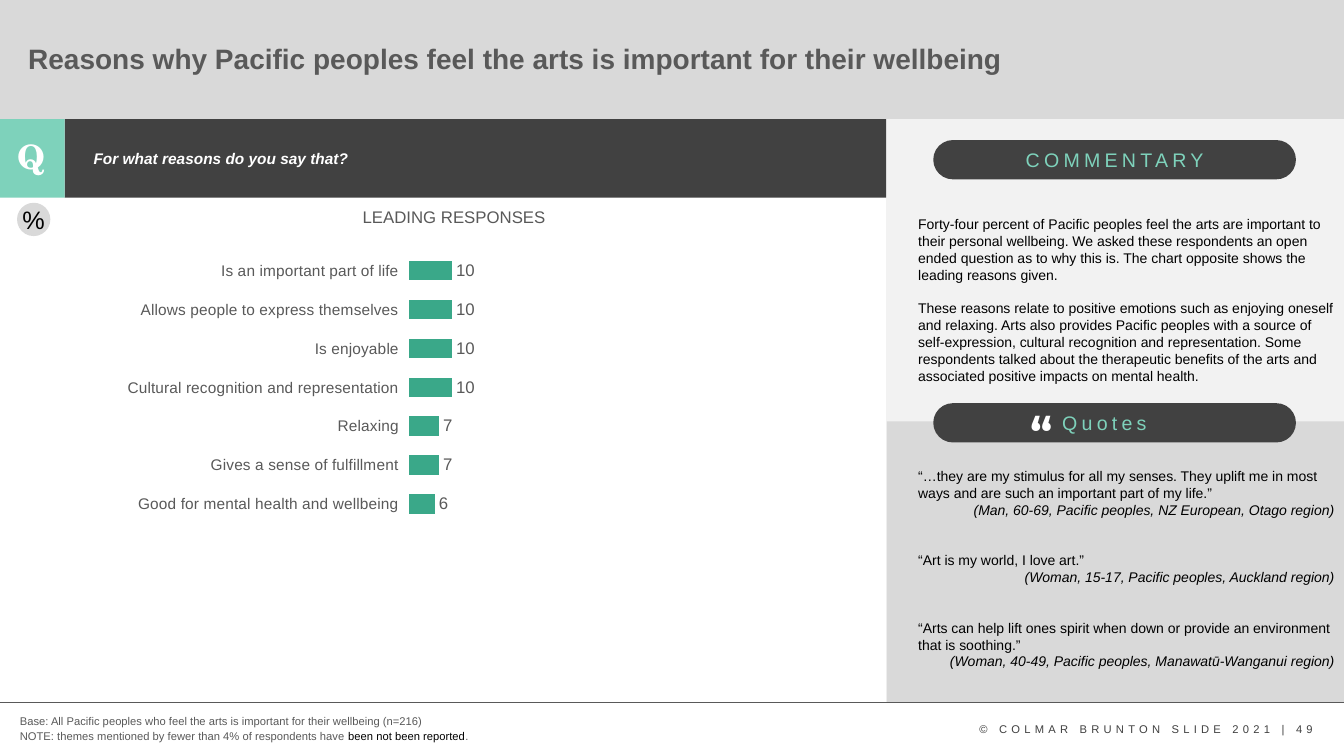
from lxml import etree
from pptx import Presentation
from pptx.chart.data import CategoryChartData
from pptx.dml.color import RGBColor
from pptx.enum.chart import XL_CHART_TYPE, XL_LABEL_POSITION as LABEL, XL_TICK_MARK as TICK
from pptx.enum.shapes import MSO_CONNECTOR, MSO_SHAPE as SHAPE
from pptx.enum.text import MSO_ANCHOR as ANCHOR, PP_ALIGN as ALIGN
from pptx.oxml import parse_xml
from pptx.oxml.ns import nsdecls, qn
from pptx.util import Cm, Pt

LIGHT = RGBColor(0xF2, 0xF2, 0xF2)
SILVER = RGBColor(0xD9, 0xD9, 0xD9)
GREY = RGBColor(0x59, 0x59, 0x59)
DARK = RGBColor(0x41, 0x41, 0x41)
FOOTER = RGBColor(0x40, 0x40, 0x40)
MINT = RGBColor(0x7E, 0xD2, 0xBB)
GREEN = RGBColor(0x3A, 0xA8, 0x89)
WHITE = RGBColor(0xFF, 0xFF, 0xFF)
BLACK = RGBColor(0, 0, 0)

prs = Presentation()
prs.slide_width, prs.slide_height = Cm(33.87), Cm(19.05)
s = prs.slides.add_slide(prs.slide_layouts[6])


def box(x, y, w, h, fill=None, kind=SHAPE.RECTANGLE):
    """Add a filled shape, or a text box when there is no fill."""
    place = Cm(x), Cm(y), Cm(w), Cm(h)
    if fill is None:
        sp = s.shapes.add_textbox(*place)
    else:
        sp = s.shapes.add_shape(kind, *place)
        sp.shadow.inherit = False
        sp.fill.solid()
        sp.fill.fore_color.rgb = fill
        sp.line.fill.background()
    sp.text_frame.word_wrap = True
    return sp


def write(sp, text, size=10, color=BLACK, font="Arial", bold=False, italic=False,
          align=ALIGN.LEFT, anchor=None, inset=None, wrap=True,
          spacing=0, leading=None, before=0):
    """Add a paragraph; text is a string or a list of (text, color) runs."""
    tf = sp.text_frame
    tf.word_wrap = wrap
    if anchor is not None:
        tf.vertical_anchor = anchor
    if inset is not None:
        tf.margin_left = tf.margin_right = tf.margin_top = tf.margin_bottom = Cm(inset)
    p = tf.add_paragraph() if tf.text else tf.paragraphs[0]
    p.alignment = align
    if leading:
        p.line_spacing = leading
    if before:
        p.space_before = Pt(before)
    for words, tint in [(text, color)] if isinstance(text, str) else text:
        r = p.add_run()
        r.text = words
        r.font.name, r.font.size = font, Pt(size)
        r.font.bold, r.font.italic = bold, italic
        r.font.color.rgb = tint
        if spacing:
            r.font._element.set("spc", str(spacing * 100))


# Title band
box(0, 0, 33.87, 3, SILVER)
write(box(0.46, 0.53, 28.42, 1.98),
      "Reasons why Pacific peoples feel the arts is important for their wellbeing",
      size=20, color=GREY, bold=True, anchor=ANCHOR.MIDDLE, leading=0.9)

# Side panels
box(22.33, 3, 11.54, 14.7, LIGHT)
box(22.35, 10.62, 11.52, 7.08, SILVER)

# Question band
box(1.63, 3, 20.7, 1.98, DARK)
box(0, 3, 1.63, 1.98, MINT)
write(box(0.2, 3.3, 1.19, 1.27), "Q", size=24, color=WHITE,
      font="TeX Gyre Schola", bold=True, align=ALIGN.CENTER)
write(box(2.11, 3.68, 19.3, 1.17), "For what reasons do you say that?",
      size=11, color=WHITE, bold=True, italic=True, leading=0.9)

# Panel headings
for heading, x, y, w in [("COMMENTARY", 25.6, 3.53, 5.13), ("Quotes", 26.52, 10.16, 2.77)]:
    pill = box(23.52, y, 9.14, 0.99, DARK, SHAPE.ROUNDED_RECTANGLE)
    pill.adjustments[0] = 0.5
    write(box(x, y + 0.08, w, 0.86), heading, size=14, color=MINT, wrap=False, spacing=3)
write(box(25.96, 10.59, 1.93, 0.81), "“", size=32, color=WHITE, font="Montserrat",
      bold=True, anchor=ANCHOR.MIDDLE, inset=0, spacing=3, leading=0.8)

# Chart heading
write(box(0.43, 5.11, 0.84, 0.84, SILVER, SHAPE.OVAL), "%", size=18,
      align=ALIGN.CENTER, anchor=ANCHOR.MIDDLE, inset=0, wrap=False)
write(box(7.75, 5.08, 7.39, 0.76), "LEADING RESPONSES", size=12, color=GREY,
      align=ALIGN.CENTER)

# Bar chart, with four free rows at the bottom
reasons = {
    "Is an important part of life": 10,
    "Allows people to express themselves": 10,
    "Is enjoyable": 10,
    "Cultural recognition and representation": 10,
    "Relaxing": 7,
    "Gives a sense of fulfillment": 7,
    "Good for mental health and wellbeing": 6,
}
free_rows = 4
data = CategoryChartData()
data.categories = list(reasons) + [""] * free_rows
data.add_series("Series 1", list(reasons.values()) + [None] * free_rows)
chart = s.shapes.add_chart(XL_CHART_TYPE.BAR_CLUSTERED, Cm(0.84), Cm(5.99),
                           Cm(21.03), Cm(11.46), data).chart
chart.has_legend = chart.has_title = False
chart.font.name, chart.font.size = "Arial", Pt(10)
chart.font.color.rgb = BLACK

axis = chart.category_axis
axis.reverse_order = True
axis.major_tick_mark = TICK.OUTSIDE
axis.format.line.fill.background()
axis.tick_labels.font.name, axis.tick_labels.font.size = "Arial", Pt(11)
axis.tick_labels.font.color.rgb = GREY
values = chart.value_axis
values.minimum_scale, values.maximum_scale = 0, 100
values.has_major_gridlines = False
values.visible = False

plot = chart.plots[0]
plot.gap_width = 100
plot.vary_by_categories = False
bars = plot.series[0].format.fill
bars.solid()
bars.fore_color.rgb = GREEN
plot.has_data_labels = True
labels = plot.data_labels
labels.show_value = True
labels.position = LABEL.OUTSIDE_END
labels.font.name, labels.font.size = "Arial", Pt(12)
labels.font.color.rgb = GREY

# Fixed plot area
area = chart._chartSpace.chart.plotArea
for old in area.findall(qn("c:layout")):
    area.remove(old)
layout = parse_xml(f"<c:layout {nsdecls('c')}><c:manualLayout/></c:layout>")
for tag, val in [("layoutTarget", "inner"), ("xMode", "edge"), ("yMode", "edge"),
                 ("x", "0.45"), ("y", "0.03"), ("w", "0.52"), ("h", "0.94")]:
    etree.SubElement(layout[0], qn(f"c:{tag}")).set("val", val)
area.insert(0, layout)

# Commentary and quotes
body = box(22.89, 5.31, 10.98, 13.08)
write(body, "Forty-four percent of Pacific peoples feel the arts are important to their "
      "personal wellbeing. We asked these respondents an open ended question as to why "
      "this is. The chart opposite shows the leading reasons given.")
write(body, "These reasons relate to positive emotions such as enjoying oneself and "
      "relaxing. Arts also provides Pacific peoples with a source of self-expression, "
      "cultural recognition and representation. Some respondents talked about the "
      "therapeutic benefits of the arts and associated positive impacts on mental health.",
      before=12)
quotes = [
    (60, "“…they are my stimulus for all my senses. They uplift me in most ways and are "
     "such an important part of my life.”",
     "(Man, 60-69, Pacific peoples, NZ European, Otago region)"),
    (24, "“Art is my world, I love art.”",
     "(Woman, 15-17, Pacific peoples, Auckland region)"),
    (24, "“Arts can help lift ones spirit when down or provide an environment that is "
     "soothing.”",
     "(Woman, 40-49, Pacific peoples, Manawatū-Wanganui region)"),
]
for gap, quote, speaker in quotes:
    write(body, quote, before=gap)
    write(body, speaker, italic=True, align=ALIGN.RIGHT)

# Footer
rule = s.shapes.add_connector(MSO_CONNECTOR.STRAIGHT, 0, Cm(17.7), Cm(33.87), Cm(17.7))
rule.line.color.rgb = GREY
rule.line.width = Pt(0.5)
etree.SubElement(rule._element.spPr, qn("a:effectLst"))
write(box(0.25, 17.88, 15.8, 0.61),
      "Base: All Pacific peoples who feel the arts is important for their wellbeing (n=216)",
      size=8, color=GREY)
write(box(0.25, 18.26, 15.8, 0.61),
      [("NOTE: themes mentioned by fewer than 4% of respondents have ", GREY),
       ("been not been reported", BLACK), (".", GREY)], size=8)
write(box(24.43, 18.08, 9.17, 0.61), "© COLMAR BRUNTON SLIDE 2021 | 49",
      size=8, color=FOOTER, spacing=3)

prs.save("out.pptx")
